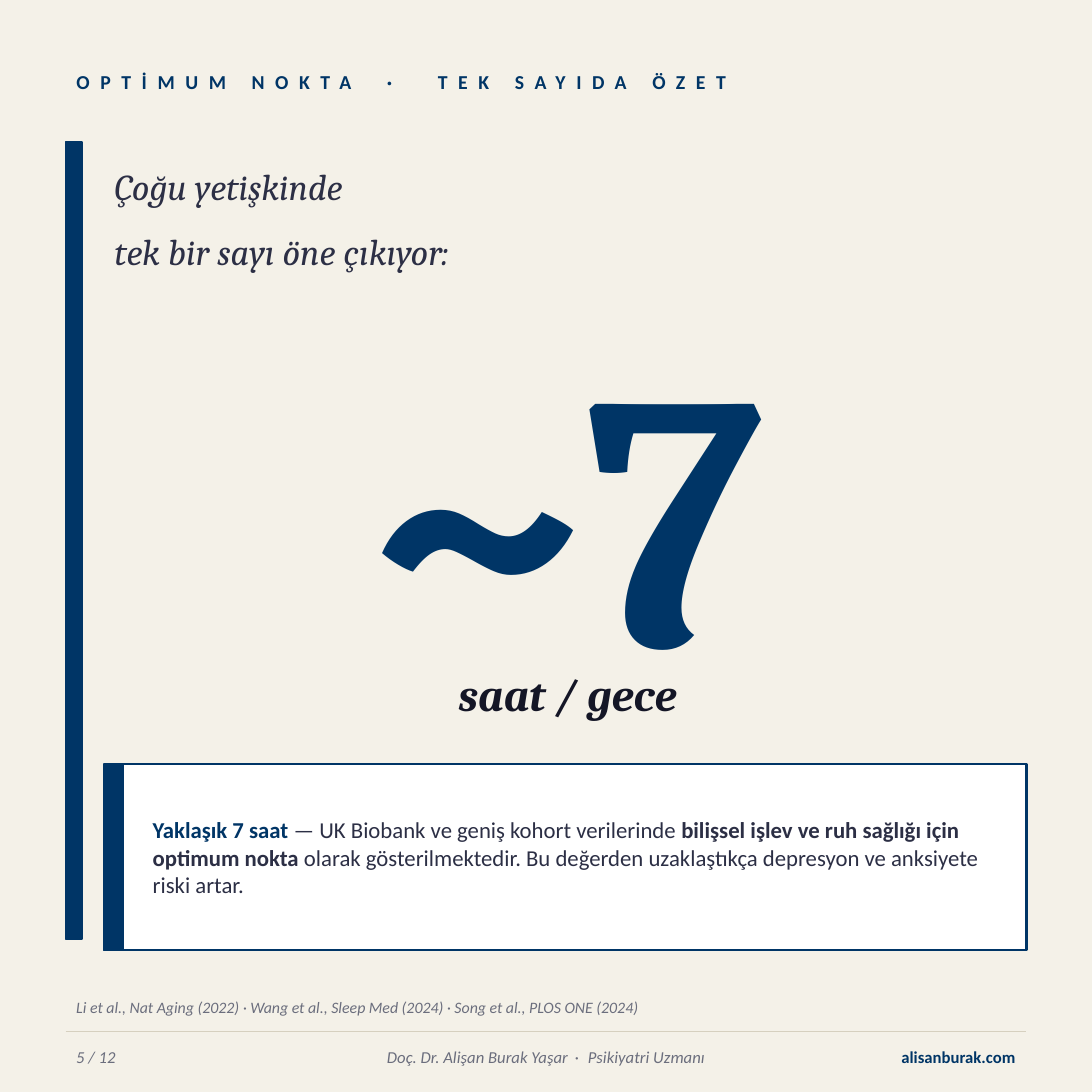
from dataclasses import dataclass

from lxml.etree import SubElement
from pptx import Presentation
from pptx.dml.color import RGBColor
from pptx.enum.shapes import MSO_CONNECTOR, MSO_SHAPE
from pptx.enum.text import MSO_ANCHOR, MSO_AUTO_SIZE, PP_ALIGN
from pptx.oxml.ns import qn
from pptx.util import Inches, Pt

COLORS = {
    "paper": "F4F1E8", "navy": "003566", "slate": "2C2F45", "ink": "141626",
    "gray": "6B6E7D", "rule": "D6D0BF", "white": "FFFFFF",
}
SANS, SERIF = "Calibri", "Cambria"
LEFT, CENTER, RIGHT = PP_ALIGN.LEFT, PP_ALIGN.CENTER, PP_ALIGN.RIGHT
MARGIN, FULL_W = 0.6, 8.8
INNER_X, INNER_W = 0.95, 8.5
CARD_Y, CARD_H = 7, 1.7
FOOT_Y, FOOT_H = 9.5, 0.35


@dataclass
class Box:
    x: float
    y: float
    w: float
    h: float

    def emu(self) -> tuple:
        return tuple(Inches(v) for v in (self.x, self.y, self.w, self.h))


@dataclass
class Run:
    text: str
    color: str = "slate"
    bold: bool = False
    italic: bool = False
    spacing: float = 0


@dataclass
class Bar:
    box: Box
    fill: str
    line_width: float


def rgb(name: str) -> RGBColor:
    return RGBColor.from_string(COLORS[name])


def write(sp, runs: list[Run], *, size: float, font: str = SANS, align=LEFT) -> None:
    tf = sp.text_frame
    tf.word_wrap = True
    tf.auto_size = MSO_AUTO_SIZE.NONE
    tf.vertical_anchor = MSO_ANCHOR.MIDDLE
    p = tf.paragraphs[0]
    p.alignment = align
    for run in runs:
        r = p.add_run()
        r.text = run.text
        r.font.name, r.font.size = font, Pt(size)
        r.font.bold, r.font.italic = run.bold, run.italic
        r.font.color.rgb = rgb(run.color)
        if run.spacing:
            r._r.get_or_add_rPr().set("spc", str(round(run.spacing * 100)))


def add_text(s, box: Box, runs: list[Run], **fmt) -> None:
    write(s.shapes.add_textbox(*box.emu()), runs, **fmt)


def add_bar(s, bar: Bar) -> None:
    sp = s.shapes.add_shape(MSO_SHAPE.RECTANGLE, *bar.box.emu())
    sp.shadow.inherit = False
    sp.fill.solid()
    sp.fill.fore_color.rgb = rgb(bar.fill)
    sp.line.color.rgb = rgb("navy")
    sp.line.width = Pt(bar.line_width)


def add_rule(s, y: float) -> None:
    line = s.shapes.add_connector(MSO_CONNECTOR.STRAIGHT, Inches(MARGIN), Inches(y),
                                  Inches(MARGIN + FULL_W), Inches(y))
    line.line.color.rgb = rgb("rule")
    line.line.width = Pt(0.75)
    SubElement(line._element.spPr, qn("a:effectLst"))


def main() -> None:
    prs = Presentation()
    prs.slide_width = prs.slide_height = Inches(10)
    s = prs.slides.add_slide(prs.slide_layouts[5])
    s.background.fill.solid()
    s.background.fill.fore_color.rgb = rgb("paper")

    # Heading, with wider tracking around the dot
    title = s.shapes.title
    title.left, title.top, title.width, title.height = Box(MARGIN, 0.55, FULL_W, 0.4).emu()
    write(title, [Run("OPTİMUM NOKTA", "navy", bold=True, spacing=7),
                  Run(" · ", "navy", bold=True, spacing=13.6),
                  Run("TEK SAYIDA ÖZET", "navy", bold=True, spacing=7)], size=13)

    # Side bar, card and card accent
    for bar in (Bar(Box(MARGIN, 1.3, 0.15, 7.3), "navy", 1),
                Bar(Box(INNER_X, CARD_Y, 8.45, CARD_H), "white", 1.5),
                Bar(Box(INNER_X, CARD_Y, 0.18, CARD_H), "navy", 1)):
        add_bar(s, bar)

    # Lead-in lines
    for i, text in enumerate(("Çoğu yetişkinde", "tek bir sayı öne çıkıyor:")):
        add_text(s, Box(INNER_X, 1.4 + 0.6 * i, INNER_W, 0.6),
                 [Run(text, italic=True)], size=24, font=SERIF)

    # Key figure and its unit
    add_text(s, Box(INNER_X, 3, INNER_W, 3.2), [Run("~7", "navy", bold=True)],
             size=240, font=SERIF, align=CENTER)
    add_text(s, Box(INNER_X, 6, INNER_W, 0.7),
             [Run("saat / gece", "ink", bold=True, italic=True)],
             size=30, font=SERIF, align=CENTER)

    # Card text
    add_text(s, Box(1.3, CARD_Y + 0.1, 7.95, CARD_H - 0.2), [
        Run("Yaklaşık 7 saat", "navy", bold=True),
        Run(" — UK Biobank ve geniş kohort verilerinde "),
        Run("bilişsel işlev ve ruh sağlığı için optimum nokta", bold=True),
        Run(" olarak gösterilmektedir. Bu değerden uzaklaştıkça "
            "depresyon ve anksiyete riski artar."),
    ], size=15)

    # Sources
    add_text(s, Box(MARGIN, 9.05, FULL_W, 0.35), [
        Run("Li et al., Nat Aging (2022) · Wang et al., Sleep Med (2024) · "
            "Song et al., PLOS ONE (2024)", "gray", italic=True)], size=10.5)

    # Footer
    add_rule(s, 9.45)
    author = [Run("Doç. Dr. Alişan Burak Yaşar", "gray", italic=True),
              Run(" · ", "gray", italic=True, spacing=1.7),
              Run("Psikiyatri Uzmanı", "gray", italic=True)]
    for x, w, runs, align in (
            (MARGIN, 1.5, [Run("5 / 12", "gray", italic=True)], LEFT),
            (2.2, 5.6, author, CENTER),
            (7.9, 1.5, [Run("alisanburak.com", "navy", bold=True)], RIGHT)):
        add_text(s, Box(x, FOOT_Y, w, FOOT_H), runs, size=11, align=align)

    prs.save("out.pptx")


if __name__ == "__main__":
    main()
